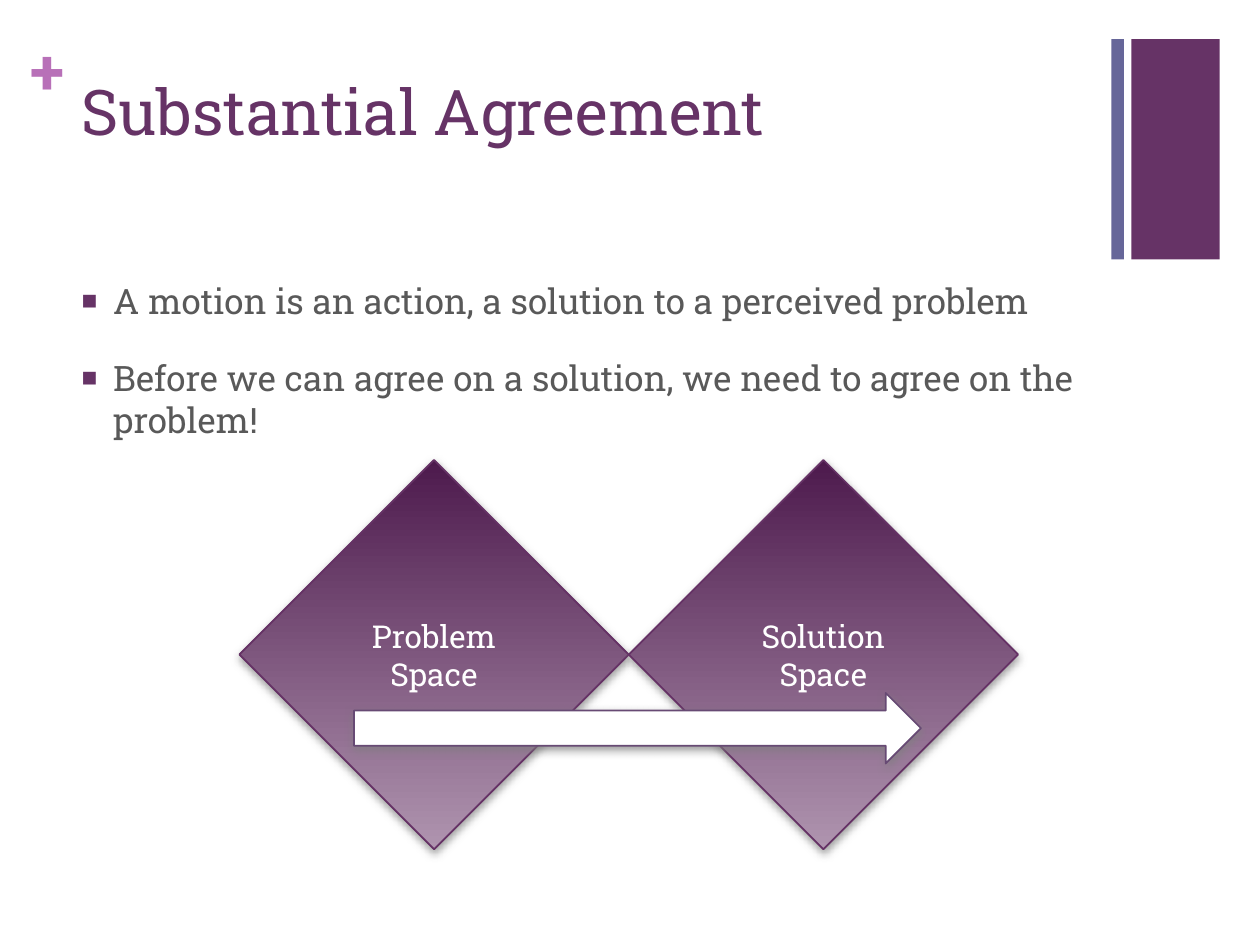
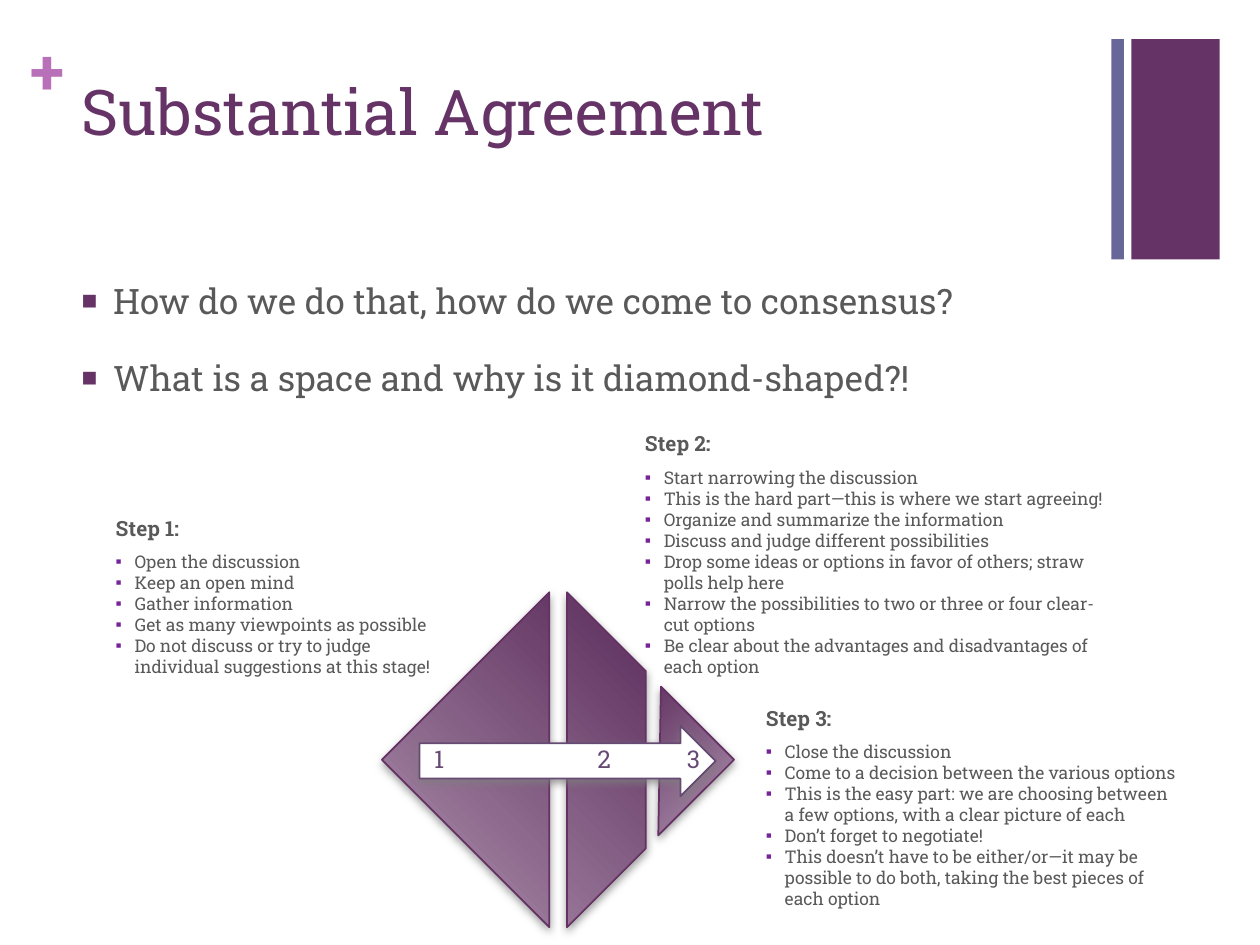
import pptx
import pptx.util
import pptx.dml.color
import pptx.enum.shapes
import pptx.enum.text
import pptx.oxml.ns
import lxml.etree
from dataclasses import dataclass

# ---- Content ----
TITLE = "Substantial Agreement"
MOTION_POINTS = [
    "A motion is an action, a solution to a perceived problem",
    "Before we can agree on a solution, we need to agree on the problem!",
]
SPACES = ["Problem Space", "Solution Space"]
CONSENSUS_POINTS = [
    "How do we do that, how do we come to consensus?",
    "What is a space and why is it diamond-shaped?!",
]
STEPS = [
    {"heading": "Step 1:", "at": (0.82, 4.04, 2.91, 1.4), "points": [
        "Open the discussion",
        "Keep an open mind",
        "Gather information",
        "Get as many viewpoints as possible",
        "Do not discuss or try to judge individual suggestions at this stage!",
    ]},
    {"heading": "Step 2:", "at": (5.02, 3.37, 3.86, 2.07), "points": [
        "Start narrowing the discussion",
        "This is the hard part—this is where we start agreeing!",
        "Organize and summarize the information",
        "Discuss and judge different possibilities",
        "Drop some ideas or options in favor of others; straw polls help here",
        "Narrow the possibilities to two or three or four clear-cut options",
        "Be clear about the advantages and disadvantages of each option",
    ]},
    {"heading": "Step 3:", "at": (5.98, 5.55, 3.47, 1.9), "points": [
        "Close the discussion",
        "Come to a decision between the various options",
        "This is the easy part: we are choosing between a few options, "
        "with a clear picture of each",
        "Don’t forget to negotiate!",
        "This doesn’t have to be either/or—it may be possible to do both, "
        "taking the best pieces of each option",
    ]},
]
STEP_NUMBERS = {"1": 3.33, "2": 4.64, "3": 5.35}  # left edge of each number


# ---- Theme ----
@dataclass(frozen=True)
class Theme:
    font: str = "Roboto Slab"
    plum: str = "663366"
    slate: str = "666699"
    orchid: str = "B870B8"
    grey: str = "595959"
    white: str = "FFFFFF"
    violet: str = "772399"
    edge: str = "653165"
    arrow: str = "674A74"
    shadow: str = "808080"
    gradient: tuple = ("4D1A4D", "AF94AF")
    title: int = 36
    body: int = 20
    space: int = 18
    number: int = 14
    heading: int = 12
    detail: int = 10


THEME = Theme()
WIDTH, HEIGHT = 10, 7.5
BAND_TOP, BAND_HEIGHT = 0.31, 1.75
CONTENT_LEFT, CONTENT_WIDTH = 0.55, 8.26
PRESET = pptx.enum.shapes.MSO_SHAPE
ALIGN = pptx.enum.text.PP_ALIGN
ANCHOR = pptx.enum.text.MSO_ANCHOR


def inches(*lengths):
    return [pptx.util.Inches(length) for length in lengths]


def rgb(code):
    return pptx.dml.color.RGBColor.from_string(code)


def add_xml(parent, tag, **attributes):
    return lxml.etree.SubElement(parent, pptx.oxml.ns.qn("a:" + tag), attributes)


# ---- Text ----
def write(frame, text, size, color, bold=False, align=None, before=0, after=0,
          bullet=None, bullet_color=None, bullet_size=100, indent=0):
    """Fill the first empty paragraph of the frame, or add one."""
    para = frame.paragraphs[-1]
    if para.runs:
        para = frame.add_paragraph()
    para.space_before, para.space_after = pptx.util.Pt(before), pptx.util.Pt(after)
    para.alignment = align
    span = para.add_run()
    span.text = text
    span.font.name, span.font.size = THEME.font, pptx.util.Pt(size)
    span.font.bold, span.font.color.rgb = bold, rgb(color)
    if bullet:
        props = para._p.get_or_add_pPr()
        margin = pptx.util.Inches(indent)
        props.set("marL", str(int(margin)))
        props.set("indent", str(-int(margin)))
        add_xml(add_xml(props, "buClr"), "srgbClr", val=bullet_color)
        add_xml(props, "buSzPct", val=str(bullet_size * 1000))
        add_xml(props, "buFont", typeface="Arial")
        add_xml(props, "buChar", char=bullet)


def add_frame(page, at, wrap=True, anchor=ANCHOR.TOP, inset=None):
    frame = page.shapes.add_textbox(*inches(*at)).text_frame
    frame.word_wrap, frame.vertical_anchor = wrap, anchor
    if inset is not None:
        frame.margin_left = frame.margin_right = inset
        frame.margin_top = frame.margin_bottom = inset
    return frame


# ---- Shapes ----
def finish(shape, line, fill=None):
    """Outline and soft shadow, with a plain fill or the purple gradient."""
    if fill:
        shape.fill.solid()
        shape.fill.fore_color.rgb = rgb(fill)
    else:
        shape.fill.gradient()
        shape.fill.gradient_angle = 270
        for stop, color in zip(shape.fill.gradient_stops, THEME.gradient):
            stop.color.rgb = rgb(color)
    shape.line.color.rgb, shape.line.width = rgb(line), pptx.util.Pt(1)
    shape.shadow.inherit = False
    effects = shape.element.spPr.find(pptx.oxml.ns.qn("a:effectLst"))
    shadow = add_xml(effects, "outerShdw", blurRad=str(int(pptx.util.Pt(5))),
                     dist=str(int(pptx.util.Pt(2))), dir="5400000", rotWithShape="0")
    add_xml(add_xml(shadow, "srgbClr", val=THEME.shadow), "alpha", val="75000")


def add_piece(page, preset, at, rotation=0, flip=False):
    piece = page.shapes.add_shape(preset, *inches(*at))
    piece.rotation = rotation
    if flip:
        piece.element.spPr.find(pptx.oxml.ns.qn("a:xfrm")).set("flipH", "1")
    finish(piece, THEME.edge)
    return piece


def add_arrow(page, at):
    finish(page.shapes.add_shape(PRESET.RIGHT_ARROW, *inches(*at)),
           THEME.arrow, THEME.white)


def add_band(page, left, width, color):
    band = page.shapes.add_shape(
        PRESET.RECTANGLE, *inches(left, BAND_TOP, width, BAND_HEIGHT))
    band.shadow.inherit = False
    band.fill.solid()
    band.fill.fore_color.rgb = rgb(color)
    band.line.fill.background()


# ---- Shared page: bands, plus sign, title, main points ----
def add_page(deck, points):
    page = deck.slides.add_slide(deck.slide_layouts[6])
    add_band(page, 8.98, 0.7, THEME.plum)
    write(add_frame(page, (0.24, 0.25, 0.29, 0.61), inset=0), "+",
          THEME.title, THEME.orchid, bold=True)
    add_band(page, 8.82, 0.1, THEME.slate)
    write(add_frame(page, (CONTENT_LEFT, 0.53, CONTENT_WIDTH, 1.22)), TITLE,
          THEME.title, THEME.plum)
    body = add_frame(page, (CONTENT_LEFT, 2.17, CONTENT_WIDTH, 4.53))
    for point in points:
        write(body, point, THEME.body, THEME.grey, before=20, bullet="■",
              bullet_color=THEME.plum, bullet_size=75, indent=0.25)
    return page


# ---- Page 1: two spaces joined by an arrow ----
def build_spaces(deck):
    page = add_page(deck, MOTION_POINTS)
    side = 3.09
    for column, name in enumerate(SPACES):
        diamond = add_piece(page, PRESET.DIAMOND,
                            (1.9 + column * side, 3.65, side, side))
        diamond.text_frame.word_wrap = True
        diamond.text_frame.vertical_anchor = ANCHOR.MIDDLE
        write(diamond.text_frame, name, THEME.space, THEME.white,
              align=ALIGN.CENTER)
    add_arrow(page, (2.81, 5.5, 4.5, 0.56))


# ---- Page 2: one diamond cut into three steps ----
def build_steps(deck):
    page = add_page(deck, CONSENSUS_POINTS)
    side, top = 1.88, 5.09
    add_piece(page, PRESET.RIGHT_TRIANGLE, (3.42, top, side, side), 45)
    add_piece(page, PRESET.RIGHT_TRIANGLE, (4.81, 5.63, 0.85, 0.82), 315, flip=True)

    # Middle slice: half a square with its far corner cut, in percent of the side
    outline = page.shapes.build_freeform(0, 0, scale=pptx.util.Inches(side) / 100)
    outline.add_line_segments([(47, 0), (100, 53), (100, 100)], close=True)
    middle = outline.convert_to_shape(*inches(3.56, top))
    middle.rotation = 45
    finish(middle, THEME.edge)

    for step in STEPS:
        frame = add_frame(page, step["at"])
        write(frame, step["heading"], THEME.heading, THEME.grey, bold=True, after=6)
        for point in step["points"]:
            write(frame, point, THEME.detail, THEME.grey, bullet="▪",
                  bullet_color=THEME.violet, indent=0.15)

    add_arrow(page, (3.33, 5.76, 2.35, 0.56))
    for number, left in STEP_NUMBERS.items():
        frame = add_frame(page, (left, 5.85, 0.31, 0.34), wrap=False,
                          anchor=ANCHOR.MIDDLE)
        write(frame, number, THEME.number, THEME.arrow, align=ALIGN.CENTER)


def main():
    deck = pptx.Presentation()
    deck.slide_width, deck.slide_height = inches(WIDTH, HEIGHT)
    build_spaces(deck)
    build_steps(deck)
    deck.save("out.pptx")


if __name__ == "__main__":
    main()
